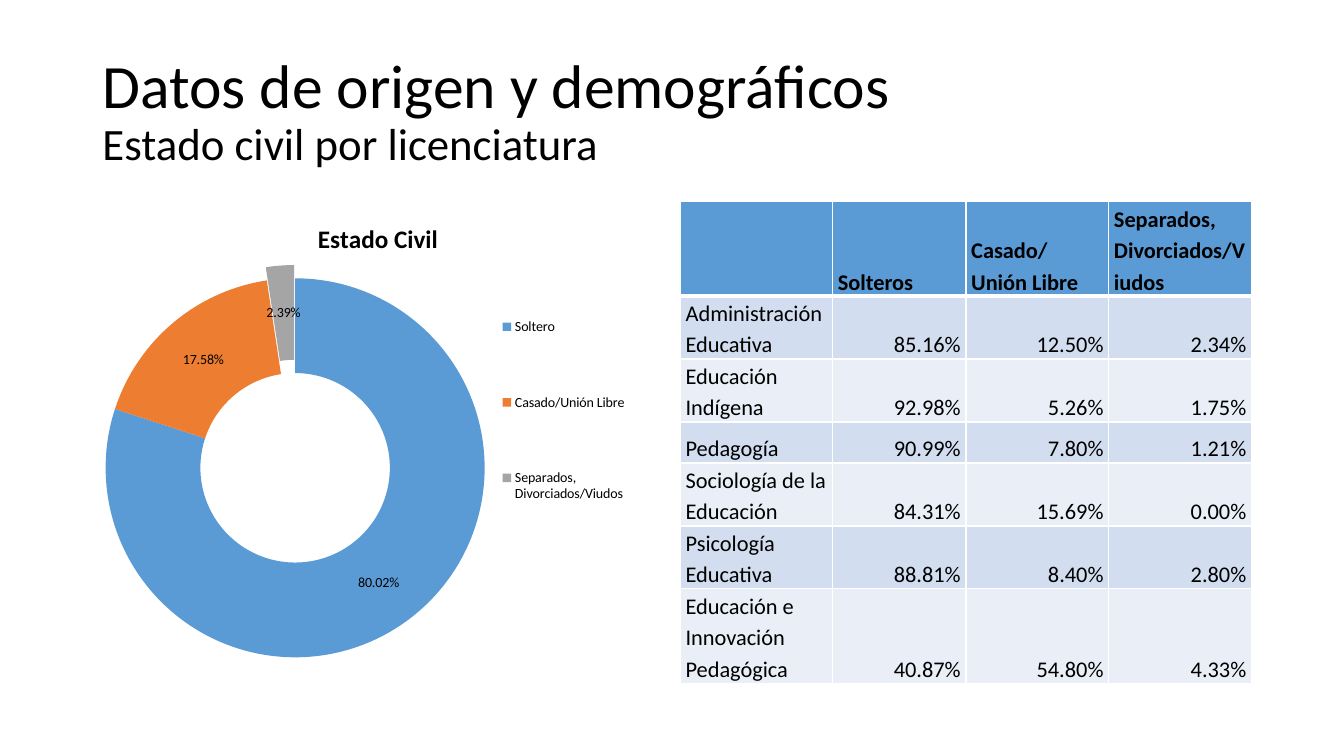
"""Build the slide on marital status by degree: a doughnut chart beside a table."""
from lxml import etree
from pptx import Presentation
from pptx.chart.data import CategoryChartData
from pptx.dml.color import RGBColor
from pptx.enum.chart import XL_CHART_TYPE as CT, XL_LEGEND_POSITION as LP
from pptx.enum.text import MSO_ANCHOR as ANCHOR, MSO_AUTO_SIZE as AUTO, PP_ALIGN as ALIGN
from pptx.oxml import parse_xml
from pptx.oxml.ns import nsdecls, qn
from pptx.util import Pt

PX = 9525
FONT = "Calibri"
BLUE, ORANGE, GRAY = "5B9BD5", "ED7D31", "A5A5A5"
BANDS = ["D2DEEF", "EAEFF7"]
STATUS = [("Soltero", 0.8002), ("Casado/Unión Libre", 0.1758),
          ("Separados, Divorciados/Viudos", 0.0239)]
COLUMNS = [145, 127, 136, 136]
ROWS = [
    ["", "Solteros", "Casado/Unión Libre", "Separados, Divorciados/Viudos"],
    ["Administración Educativa", "85.16%", "12.50%", "2.34%"],
    ["Educación Indígena", "92.98%", "5.26%", "1.75%"],
    ["Pedagogía", "90.99%", "7.80%", "1.21%"],
    ["Sociología de la Educación", "84.31%", "15.69%", "0.00%"],
    ["Psicología Educativa", "88.81%", "8.40%", "2.80%"],
    ["Educación e Innovación Pedagógica", "40.87%", "54.80%", "4.33%"],
]


def box(*lengths):
    return [n * PX for n in lengths]


def color(value):
    return RGBColor.from_string(value)


def set_font(font, size, bold=False):
    font.name, font.size, font.bold = FONT, Pt(size), bold
    font.color.rgb = color("000000")


def set_fill(fill, value):
    fill.solid()
    fill.fore_color.rgb = color(value)


def add_title(s, heading, subheading):
    sp = s.shapes.title
    sp.left, sp.top, sp.width, sp.height = box(88, 38, 1104, 139)
    tf = sp.text_frame
    tf.auto_size, tf.vertical_anchor = AUTO.NONE, ANCHOR.MIDDLE
    p = tf.paragraphs[0]
    p.text = f"{heading}\v{subheading}"
    p.alignment, p.line_spacing = ALIGN.LEFT, 0.9
    for r, size in zip(p.runs, (44, 32)):
        set_font(r.font, size)


def set_layout(parent, before, x, y, w, h, inner=False):
    old = parent.find(qn("c:layout"))
    if old is not None:
        parent.remove(old)
    target = '<c:layoutTarget val="inner"/>' if inner else ""
    modes = '<c:xMode val="edge"/><c:yMode val="edge"/>'
    sizes = "".join(f'<c:{k} val="{v}"/>' for k, v in zip("xywh", (x, y, w, h)))
    layout = parse_xml(f'<c:layout {nsdecls("c")}><c:manualLayout>{target}{modes}{sizes}'
                       '</c:manualLayout></c:layout>')
    parent.find(qn(before)).addprevious(layout)


def add_doughnut(s):
    data = CategoryChartData(number_format="0.00%")
    data.categories = [name for name, _ in STATUS]
    data.add_series("Estado Civil", [share for _, share in STATUS])
    chart = s.shapes.add_chart(CT.DOUGHNUT, *box(88, 192, 544, 457), data).chart
    set_font(chart.font, 10)
    chart.has_title = True
    tf = chart.chart_title.text_frame
    tf.text = "Estado Civil"
    set_font(tf.paragraphs[0].runs[0].font, 18, True)
    chart.has_legend = True
    legend = chart.legend
    legend.position, legend.include_in_layout = LP.RIGHT, False
    set_font(legend.font, 10)
    plot = chart.plots[0]
    plot.vary_by_categories = True
    plot.has_data_labels = True
    labels = plot.data_labels
    labels.show_value, labels.show_percentage = True, False
    labels.number_format, labels.number_format_is_linked = "0.00%", False
    set_font(labels.font, 10)
    for i, value in enumerate((BLUE, ORANGE, GRAY)):
        set_fill(plot.series[0].points[i].format.fill, value)
    slice_xml = plot.series[0].points[2].format.fill._xPr.getparent()
    explosion = etree.Element(qn("c:explosion"), val="14")
    slice_xml.find(qn("c:spPr")).addprevious(explosion)
    area = chart._chartSpace.chart.plotArea
    set_layout(area, "c:doughnutChart", 0.02, 0.16, 0.67, 0.79, inner=True)
    set_layout(legend._element, "c:overlay", 0.69, 0.12, 0.27, 0.63)


def set_borders(cell, bottom):
    tc_pr = cell._tc.get_or_add_tcPr()
    for i, side in enumerate("LRTB"):
        width = Pt(bottom if side == "B" else 1)
        tc_pr.insert(i, parse_xml(
            f'<a:ln{side} {nsdecls("a")} w="{width}"><a:solidFill>'
            f'<a:srgbClr val="FFFFFF"/></a:solidFill></a:ln{side}>'))


def fill_cell(cell, text, row, col):
    header = row == 0
    cell.margin_left = cell.margin_right = 5 * PX
    cell.margin_top = cell.margin_bottom = 0
    cell.vertical_anchor = ANCHOR.BOTTOM
    set_fill(cell.fill, BLUE if header else BANDS[(row - 1) % 2])
    set_borders(cell, 3 if header else 1)
    p = cell.text_frame.paragraphs[0]
    p.text = text
    p.line_spacing = 1.15
    p.alignment = ALIGN.RIGHT if row and col else ALIGN.LEFT
    set_font(p.font, 16, header)
    for r in p.runs:
        set_font(r.font, 16, header)


def add_status_table(s):
    frame = s.shapes.add_table(len(ROWS), len(COLUMNS),
                               *box(648, 192, sum(COLUMNS), 39 * len(ROWS)))
    table = frame.table
    for column, width in zip(table.columns, COLUMNS):
        column.width = width * PX
    for i, row in enumerate(ROWS):
        for j, text in enumerate(row):
            fill_cell(table.cell(i, j), text, i, j)


def main():
    prs = Presentation()
    prs.slide_width, prs.slide_height = box(1280, 720)
    s = prs.slides.add_slide(prs.slide_layouts[5])
    add_title(s, "Datos de origen y demográficos", "Estado civil por licenciatura")
    add_status_table(s)
    add_doughnut(s)
    prs.save("out.pptx")


if __name__ == "__main__":
    main()
